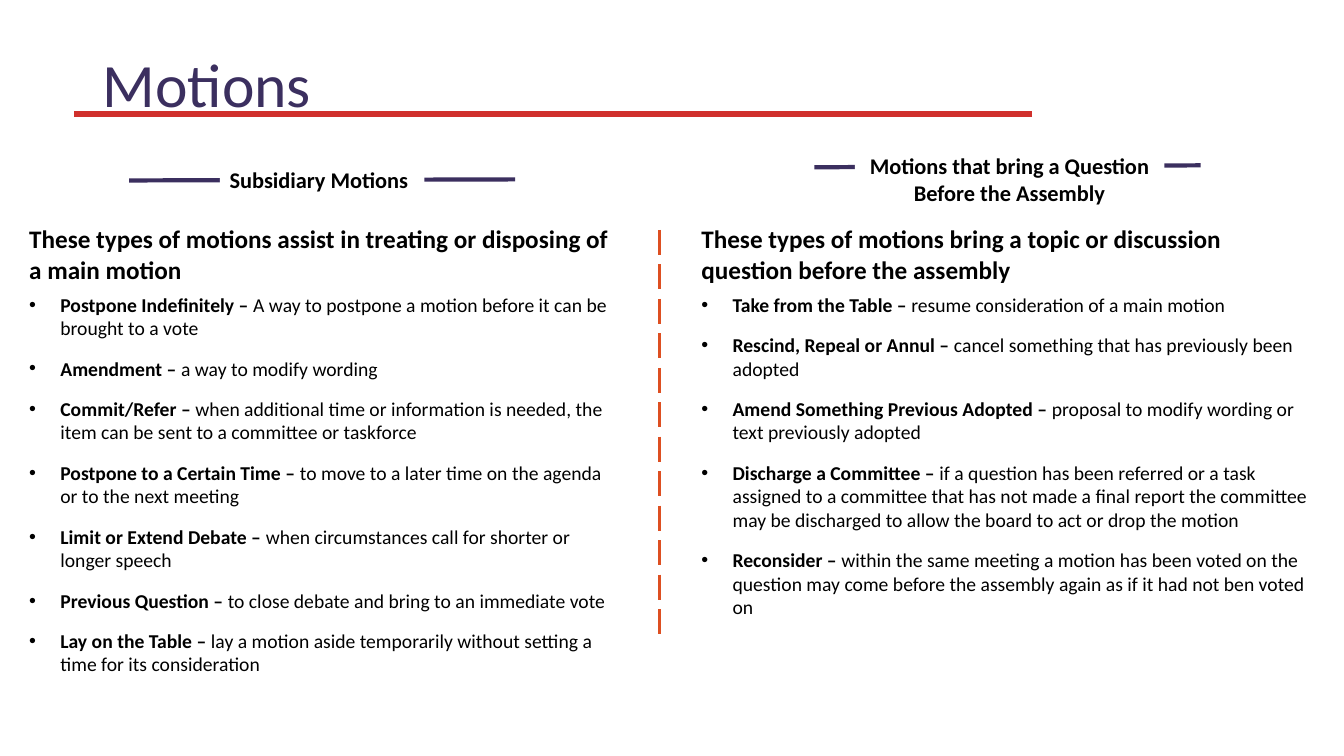
from dataclasses import dataclass

from lxml.etree import SubElement
from pptx import Presentation
from pptx.dml.color import RGBColor
from pptx.enum.dml import MSO_LINE
from pptx.enum.shapes import MSO_CONNECTOR, MSO_SHAPE
from pptx.enum.text import MSO_ANCHOR, PP_ALIGN
from pptx.oxml.ns import qn
from pptx.slide import Slide
from pptx.text.text import TextFrame, _Paragraph as Paragraph
from pptx.util import Inches, Pt

FONT = "Calibri"
PURPLE = RGBColor(0x3B, 0x2F, 0x5F)
ORANGE = RGBColor(0xDD, 0x4F, 0x21)
RED = RGBColor(0xD0, 0x30, 0x2C)
BLACK = RGBColor(0, 0, 0)
WHITE = RGBColor(0xFF, 0xFF, 0xFF)

SLIDE_WIDTH, SLIDE_HEIGHT = Inches(13.33), Inches(7.5)
BULLET_INDENT = Inches(0.31)
LIST_TOP = 28.93


@dataclass(frozen=True)
class Box:
    """An area in percent of the slide's width and height."""
    left: float
    top: float
    width: float
    height: float

    def lengths(self) -> tuple[int, int, int, int]:
        return (across(self.left), down(self.top),
                across(self.width), down(self.height))


@dataclass(frozen=True)
class Rule:
    """A straight line, its ends in percent of the slide's size."""
    start: tuple[float, float]
    end: tuple[float, float]
    color: RGBColor
    width: float
    dash: MSO_LINE | None = None


@dataclass(frozen=True)
class MotionColumn:
    label: str
    label_box: Box
    label_alignment: PP_ALIGN
    label_rule: Rule
    intro: str
    list_box: Box
    motions: tuple[tuple[str, str], ...]


TITLE_BOX = Box(6.9, 1.87, 86.25, 19.33)
DIVIDER = Rule((49.05, 30.4), (49.05, 84.93), ORANGE, 2.25, MSO_LINE.LONG_DASH)
TITLE_RULE = Rule((76.8, 15.07), (5.48, 15.07), RED, 4)

COLUMNS = (
    MotionColumn(
        "Subsidiary Motions", Box(16.35, 21.33, 15.23, 4.93), PP_ALIGN.LEFT,
        Rule((9.6, 23.87), (38.33, 23.73), PURPLE, 3),
        "These types of motions assist in treating or disposing of a main motion",
        Box(1.43, LIST_TOP, 45.15, 61.73),
        (
            ("Postpone Indefinitely",
             "A way to postpone a motion before it can be brought to a vote"),
            ("Amendment", "a way to modify wording"),
            ("Commit/Refer",
             "when additional time or information is needed, the item can be "
             "sent to a committee or taskforce"),
            ("Postpone to a Certain Time",
             "to move to a later time on the agenda or to the next meeting"),
            ("Limit or Extend Debate",
             "when circumstances call for shorter or longer speech"),
            ("Previous Question",
             "to close debate and bring to an immediate vote"),
            ("Lay on the Table",
             "lay a motion aside temporarily without setting a time for its "
             "consideration"),
        ),
    ),
    MotionColumn(
        "Motions that bring a Question Before the Assembly",
        Box(63.6, 19.47, 23.03, 8.53), PP_ALIGN.CENTER,
        Rule((60.6, 22.13), (89.33, 21.87), PURPLE, 3),
        "These types of motions bring a topic or discussion question before "
        "the assembly",
        Box(51.45, LIST_TOP, 47.03, 54.13),
        (
            ("Take from the Table", "resume consideration of a main motion"),
            ("Rescind, Repeal or Annul",
             "cancel something that has previously been adopted"),
            ("Amend Something Previous Adopted",
             "proposal to modify wording or text previously adopted"),
            ("Discharge a Committee",
             "if a question has been referred or a task assigned to a "
             "committee that has not made a final report the committee may be "
             "discharged to allow the board to act or drop the motion"),
            ("Reconsider",
             "within the same meeting a motion has been voted on the question "
             "may come before the assembly again as if it had not ben voted on"),
        ),
    ),
)


def across(percent: float) -> int:
    return round(SLIDE_WIDTH * percent / 100)


def down(percent: float) -> int:
    return round(SLIDE_HEIGHT * percent / 100)


def add_run(paragraph: Paragraph, text: str, size: float,
            bold: bool = False, color: RGBColor = BLACK) -> None:
    run = paragraph.add_run()
    run.text = text
    run.font.name = FONT
    run.font.size = Pt(size)
    run.font.bold = bold
    run.font.color.rgb = color


def add_text_frame(slide: Slide, box: Box) -> TextFrame:
    text_frame = slide.shapes.add_textbox(*box.lengths()).text_frame
    text_frame.word_wrap = True
    return text_frame


def add_rule(slide: Slide, rule: Rule) -> None:
    (x1, y1), (x2, y2) = rule.start, rule.end
    connector = slide.shapes.add_connector(
        MSO_CONNECTOR.STRAIGHT, across(x1), down(y1), across(x2), down(y2))
    connector.line.color.rgb = rule.color
    connector.line.width = Pt(rule.width)
    if rule.dash is not None:
        connector.line.dash_style = rule.dash
    SubElement(connector._element.spPr, qn("a:effectLst"))


def make_bullet(paragraph: Paragraph) -> None:
    paragraph.space_before = paragraph.space_after = Pt(6)
    properties = paragraph._p.get_or_add_pPr()
    properties.set("marL", str(BULLET_INDENT))
    properties.set("indent", str(-BULLET_INDENT))
    SubElement(properties, qn("a:buFont"), typeface="Arial")
    SubElement(properties, qn("a:buChar"), char="•")


def add_motion_list(slide: Slide, column: MotionColumn) -> None:
    text_frame = add_text_frame(slide, column.list_box)
    add_run(text_frame.paragraphs[0], column.intro, 18, bold=True)
    for name, meaning in column.motions:
        paragraph = text_frame.add_paragraph()
        make_bullet(paragraph)
        add_run(paragraph, f"{name} – ", 14, bold=True)
        add_run(paragraph, meaning, 14)


def add_label(slide: Slide, column: MotionColumn) -> None:
    add_rule(slide, column.label_rule)
    # The white label hides the middle of its rule
    shape = slide.shapes.add_shape(MSO_SHAPE.RECTANGLE,
                                   *column.label_box.lengths())
    shape.shadow.inherit = False
    shape.fill.solid()
    shape.fill.fore_color.rgb = WHITE
    shape.line.fill.background()
    shape.text_frame.word_wrap = True
    shape.text_frame.vertical_anchor = MSO_ANCHOR.TOP
    paragraph = shape.text_frame.paragraphs[0]
    paragraph.alignment = column.label_alignment
    add_run(paragraph, column.label, 16, bold=True)


def main() -> None:
    presentation = Presentation()
    presentation.slide_width = SLIDE_WIDTH
    presentation.slide_height = SLIDE_HEIGHT
    slide = presentation.slides.add_slide(presentation.slide_layouts[6])

    # Title
    title = add_text_frame(slide, TITLE_BOX)
    title.vertical_anchor = MSO_ANCHOR.MIDDLE
    title.paragraphs[0].line_spacing = 0.9
    add_run(title.paragraphs[0], "Motions", 44, color=PURPLE)

    # Two columns with a divider between them
    add_rule(slide, DIVIDER)
    for column in COLUMNS:
        add_motion_list(slide, column)
        add_label(slide, column)

    # Line under the title
    add_rule(slide, TITLE_RULE)
    presentation.save("out.pptx")


if __name__ == "__main__":
    main()
